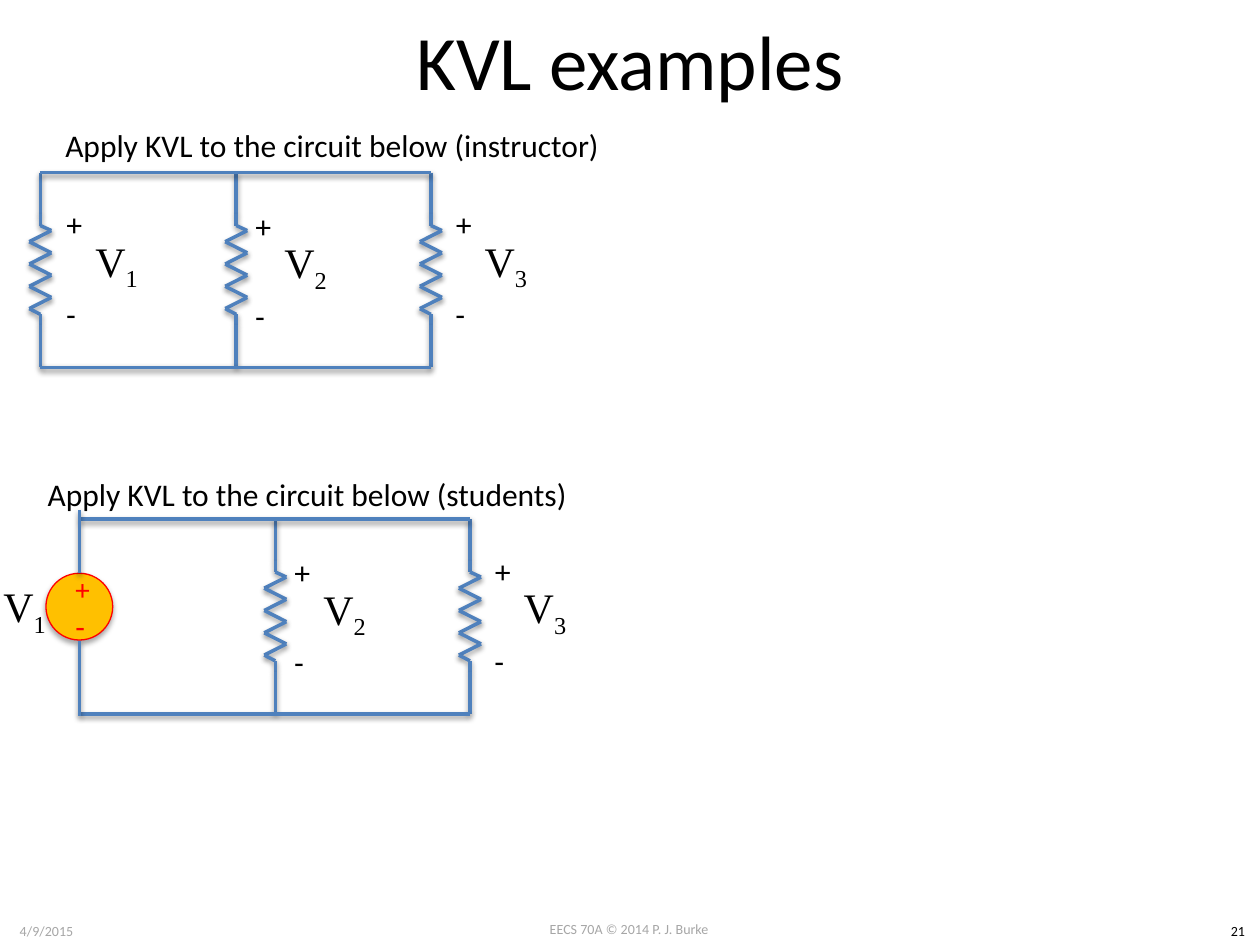
from dataclasses import dataclass
from itertools import pairwise

from lxml import etree
from pptx import Presentation
from pptx.dml.color import RGBColor
from pptx.enum.shapes import MSO_CONNECTOR, MSO_SHAPE
from pptx.enum.text import MSO_ANCHOR, MSO_AUTO_SIZE, PP_ALIGN
from pptx.oxml.ns import qn
from pptx.util import Inches, Pt

STRAIGHT = MSO_CONNECTOR.STRAIGHT
OVAL = MSO_SHAPE.OVAL
MIDDLE, TOP = MSO_ANCHOR.MIDDLE, MSO_ANCHOR.TOP
CENTER, LEFT = PP_ALIGN.CENTER, PP_ALIGN.LEFT
FIT_SHAPE, NO_FIT = MSO_AUTO_SIZE.SHAPE_TO_FIT_TEXT, MSO_AUTO_SIZE.NONE

COLORS = {
    "wire": "4F81BD",
    "source": "FFC000",
    "source_edge": "FF0000",
    "text": "000000",
    "footer": "A6A6A6",
}
BODY_FONT, SYMBOL_FONT = "Calibri", "Times New Roman"

CIRCUIT_WIDTH, CIRCUIT_HEIGHT = 3.10, 1.545
ZIGZAG_HALF_WIDTH, ZIGZAG_STEP = 0.0875, 0.0885


@dataclass
class Resistor:
    subscript: str
    dx: float        # centre line, from the circuit's left edge
    label_dx: float  # voltage label, from the circuit's left edge
    label_dy: float  # voltage label, from the circuit's top wire


@dataclass
class Circuit:
    caption: str
    caption_box: tuple[float, float, float, float]
    left: float
    top: float
    resistors: list[Resistor]


R1 = Resistor("1", 0, 0.01, 0.36)
R2 = Resistor("2", 1.555, 1.51, 0.37)
R3 = Resistor("3", 3.10, 3.10, 0.36)

CIRCUITS = [
    Circuit("Apply KVL to the circuit below (instructor)",
            (0.42, 0.95, 4.54, 0.4), 0.32, 1.37, [R1, R2, R3]),
    Circuit("Apply KVL to the circuit below (students)",
            (0.28, 3.72, 4.37, 0.4), 0.63, 4.12, [R2, R3]),
]


def rgb(name: str) -> RGBColor:
    return RGBColor.from_string(COLORS[name])


def add_shadow(shape, opacity: int, distance: float) -> None:
    effects = etree.SubElement(shape._element.spPr, qn("a:effectLst"))
    shadow = etree.SubElement(
        effects, qn("a:outerShdw"), blurRad=str(Pt(3.1)), dist=str(Pt(distance)),
        dir="5400000", rotWithShape="0")
    black = etree.SubElement(shadow, qn("a:srgbClr"), val=COLORS["text"])
    etree.SubElement(black, qn("a:alpha"), val=str(opacity * 1000))


def write(frame, text: str, *, size: float, font: str = BODY_FONT,
          color: str = "text", align=LEFT, anchor=TOP, wrap: bool = True,
          fit=NO_FIT, subscript: str = "") -> None:
    frame.word_wrap = wrap
    frame.auto_size = fit
    frame.vertical_anchor = anchor
    paragraph = frame.paragraphs[0]
    paragraph.alignment = align
    for part in filter(None, (text, subscript)):
        run = paragraph.add_run()
        run.text = part
        run.font.size, run.font.name = Pt(size), font
        run.font.color.rgb = rgb(color)
    if subscript:
        run._r.get_or_add_rPr().set("baseline", "-25000")


def add_text(shapes, text: str, box: tuple[float, float, float, float],
             *, rotation: float = 0, **text_format) -> None:
    textbox = shapes.add_textbox(*map(Inches, box))
    textbox.rotation = rotation
    write(textbox.text_frame, text, **text_format)


def add_wire(shapes, start: tuple[float, float], end: tuple[float, float]) -> None:
    wire = shapes.add_connector(STRAIGHT, *map(Inches, (*start, *end)))
    wire.line.color.rgb = rgb("wire")
    wire.line.width = Pt(2)
    add_shadow(wire, 38, 1.6)


def add_resistor(shapes, x: float, top: float) -> None:
    zigzag = [(ZIGZAG_HALF_WIDTH * (-1) ** i, 0.46 + i * ZIGZAG_STEP)
              for i in range(8)]
    offsets = [(0, 0), (0, 0.33), (0, 0.42), *zigzag,
               (0, 1.125), (0, 1.21), (0, CIRCUIT_HEIGHT)]
    resistor = shapes.add_group_shape()
    for start, end in pairwise((x + dx, top + dy) for dx, dy in offsets):
        add_wire(resistor.shapes, start, end)


def add_symbol(shapes, subscript: str, x: float, y: float) -> None:
    add_text(shapes, "V", (x, y, 1.19, 0.73), size=24, font=SYMBOL_FONT,
             align=CENTER, anchor=MIDDLE, subscript=subscript)


def add_voltage(shapes, subscript: str, x: float, y: float) -> None:
    voltage = shapes.add_group_shape().shapes
    add_symbol(voltage, subscript, x, y)
    for sign, dy, width in (("+", -0.11, 0.33), ("-", 0.62, 0.28)):
        add_text(voltage, sign, (x + 0.09, y + dy, width, 0.4), rotation=180,
                 size=18, wrap=False, fit=FIT_SHAPE)


def add_circuit(shapes, circuit: Circuit) -> None:
    left, top = circuit.left, circuit.top
    for resistor in circuit.resistors:
        add_resistor(shapes, left + resistor.dx, top)
    for y in (top, top + CIRCUIT_HEIGHT):
        add_wire(shapes, (left, y), (left + CIRCUIT_WIDTH, y))
    for resistor in circuit.resistors:
        add_voltage(shapes, resistor.subscript,
                    left + resistor.label_dx, top + resistor.label_dy)
    add_text(shapes, circuit.caption, circuit.caption_box,
             size=18, wrap=False, fit=FIT_SHAPE)


def add_voltage_source(shapes, x: float) -> None:
    source = shapes.add_group_shape().shapes
    body = source.add_shape(OVAL, *map(Inches, (x - 0.265, 4.55, 0.53, 0.53)))
    body.fill.solid()
    body.fill.fore_color.rgb = rgb("source")
    body.line.color.rgb = rgb("source_edge")
    body.line.width = Pt(0.75)
    add_shadow(body, 35, 1.8)
    for sign, y, size in (("+", 4.51, 16.6), ("-", 4.8, 18)):
        add_text(source, sign, (x - 0.13, y, 0.26, 0.33), size=size,
                 color="source_edge", align=CENTER, anchor=MIDDLE)
    add_wire(source, (x, 5.68), (x, 5.09))
    add_wire(source, (x, 4.55), (x, 4.05))


def main() -> None:
    presentation = Presentation()
    presentation.slide_width, presentation.slide_height = Inches(10), Inches(7.5)
    slide = presentation.slides.add_slide(presentation.slide_layouts[5])
    shapes = slide.shapes

    # Footer
    for text, box, color in (
        ("EECS 70A © 2014 P. J. Burke", (3.83, 7.26, 2.33, 0.24), "footer"),
        ("4/9/2015", (0, 7.27, 0.74, 0.24), "footer"),
        ("21", (9.65, 7.27, 0.35, 0.24), "text"),
    ):
        add_text(shapes, text, box, size=8, color=color, align=CENTER, fit=FIT_SHAPE)

    # Title
    title = shapes.title
    title.left, title.top, title.width, title.height = map(Inches, (0.5, 0, 9, 0.95))
    write(title.text_frame, "KVL examples", size=44, align=CENTER, anchor=MIDDLE)

    # Circuits
    for circuit in CIRCUITS:
        add_circuit(shapes, circuit)

    # Voltage source of the students' circuit
    add_voltage_source(shapes, CIRCUITS[1].left)
    add_symbol(shapes, "1", -0.4, 4.47)

    presentation.save("out.pptx")


if __name__ == "__main__":
    main()
